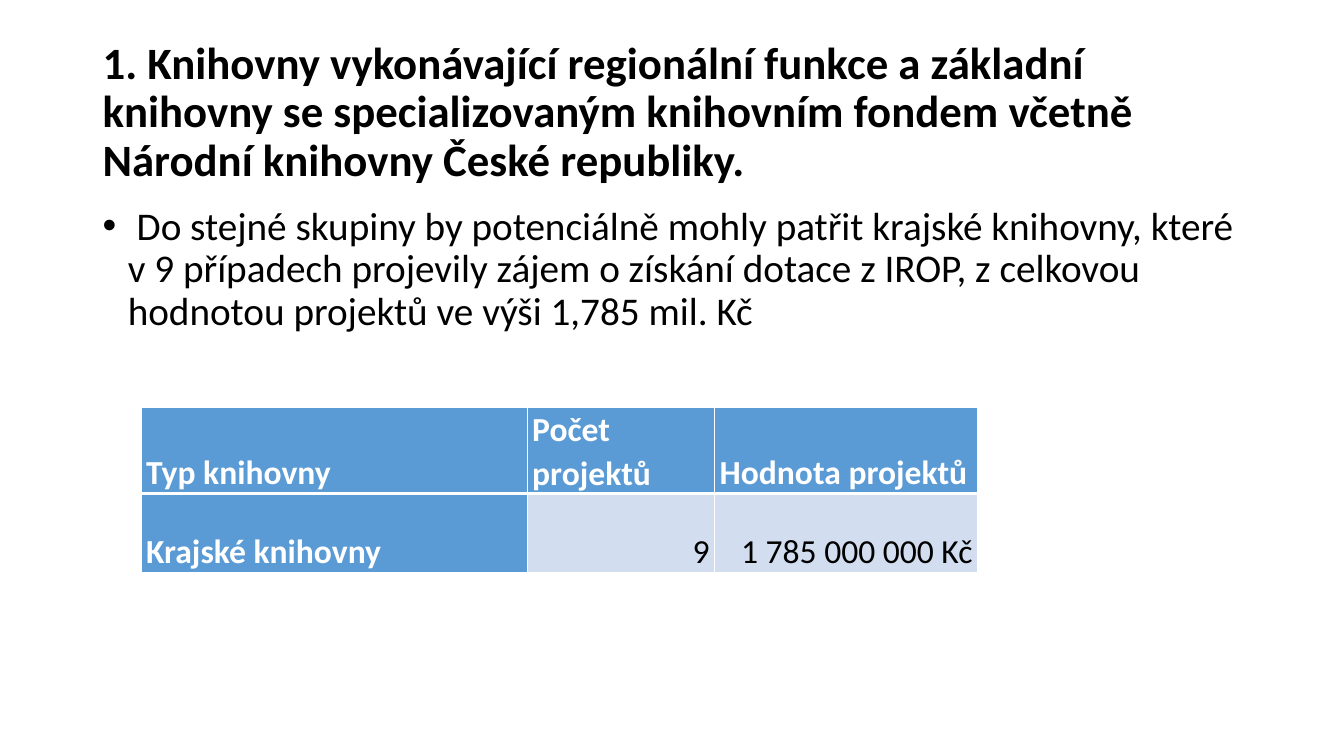
from dataclasses import dataclass

from lxml.etree import SubElement
from pptx import Presentation
from pptx.dml.color import RGBColor
from pptx.enum.text import MSO_ANCHOR, PP_ALIGN
from pptx.oxml import parse_xml
from pptx.oxml.ns import nsdecls, qn
from pptx.util import Pt

COLORS = {
    "text": "000000",
    "white": "FFFFFF",
    "header": "5B9BD5",
    "value": "D2DEEF",
}


@dataclass(frozen=True)
class TextBox:
    text: str
    top: float
    height: float
    size: float
    bold: bool = False
    anchor: MSO_ANCHOR = MSO_ANCHOR.TOP
    bullet: bool = False


@dataclass(frozen=True)
class Cell:
    text: str
    heading: bool = True


LEFT, WIDTH = 66.24, 828
BOXES = [
    TextBox(
        "1. Knihovny vykonávající regionální funkce a základní knihovny se "
        "specializovaným knihovním fondem včetně Národní knihovny České republiky.",
        28.8, 104.4, 32, bold=True, anchor=MSO_ANCHOR.MIDDLE,
    ),
    TextBox(
        " Do stejné skupiny by potenciálně mohly patřit krajské knihovny, které "
        "v 9 případech projevily zájem o získání dotace z IROP, z celkovou "
        "hodnotou projektů ve výši 1,785 mil. Kč",
        144, 342.72, 28, bullet=True,
    ),
]

TABLE_LEFT, TABLE_TOP = 100.8, 290.88
COLUMNS = [275.76, 133.92, 187.92]
ROW_HEIGHT = 56.16
ROWS = [
    [Cell("Typ knihovny"), Cell("Počet projektů"), Cell("Hodnota projektů")],
    [Cell("Krajské knihovny"), Cell("9", False), Cell("1 785 000 000 Kč", False)],
]


def apply(target: object, values: dict) -> None:
    for name, value in values.items():
        setattr(target, name, value)


def write(p, text: str, size: float, bold: bool, color: str) -> None:
    r = p.add_run()
    r.text = text
    apply(r.font, {"name": "Calibri", "size": Pt(size), "bold": bold})
    r.font.color.rgb = RGBColor.from_string(COLORS[color])


def add_bullet(p) -> None:
    p.space_before = Pt(10)
    pPr = p._p.get_or_add_pPr()
    pPr.set("marL", str(Pt(18)))
    pPr.set("indent", str(Pt(-18)))
    SubElement(pPr, qn("a:buFont")).set("typeface", "Arial")
    SubElement(pPr, qn("a:buChar")).set("char", "•")


def add_text(s, box: TextBox) -> None:
    sp = s.shapes.add_textbox(Pt(LEFT), Pt(box.top), Pt(WIDTH), Pt(box.height))
    tf = sp.text_frame
    apply(tf, {"word_wrap": True, "vertical_anchor": box.anchor})
    p = tf.paragraphs[0]
    p.line_spacing = 0.9
    if box.bullet:
        add_bullet(p)
    write(p, box.text, box.size, box.bold, "text")


def add_borders(cell, widths: dict[str, float]) -> None:
    tcPr = cell._tc.get_or_add_tcPr()
    for i, (side, width) in enumerate(widths.items()):
        tcPr.insert(i, parse_xml(
            f'<a:{side} {nsdecls("a")} w="{Pt(width)}"><a:solidFill>'
            f'<a:srgbClr val="{COLORS["white"]}"/></a:solidFill></a:{side}>'
        ))


def fill_cell(cell, content: Cell, row: int) -> None:
    apply(cell, {
        "margin_left": Pt(3.6),
        "margin_right": Pt(3.6),
        "margin_top": Pt(0),
        "margin_bottom": Pt(0),
        "vertical_anchor": MSO_ANCHOR.BOTTOM,
    })
    cell.fill.solid()
    fill = "header" if content.heading else "value"
    cell.fill.fore_color.rgb = RGBColor.from_string(COLORS[fill])
    add_borders(cell, {
        "lnL": 1,
        "lnR": 1,
        "lnT": 1 if row == 0 else 3,
        "lnB": 3 if row == 0 else 1,
    })
    p = cell.text_frame.paragraphs[0]
    apply(p, {
        "line_spacing": 1.07,
        "alignment": PP_ALIGN.LEFT if content.heading else PP_ALIGN.RIGHT,
    })
    color = "white" if content.heading else "text"
    write(p, content.text, 24, content.heading, color)


def add_library_table(s) -> None:
    table = s.shapes.add_table(
        len(ROWS), len(COLUMNS), Pt(TABLE_LEFT), Pt(TABLE_TOP),
        Pt(sum(COLUMNS)), Pt(ROW_HEIGHT * len(ROWS)),
    ).table
    apply(table, {"first_col": True, "horz_banding": False})
    for column, width in zip(table.columns, COLUMNS):
        column.width = Pt(width)
    for i, row in enumerate(ROWS):
        table.rows[i].height = Pt(ROW_HEIGHT)
        for j, content in enumerate(row):
            fill_cell(table.cell(i, j), content, i)


def main() -> None:
    prs = Presentation()
    apply(prs, {"slide_width": Pt(960), "slide_height": Pt(540)})
    s = prs.slides.add_slide(prs.slide_layouts[6])
    for box in BOXES:
        add_text(s, box)
    add_library_table(s)
    prs.save("out.pptx")


if __name__ == "__main__":
    main()
